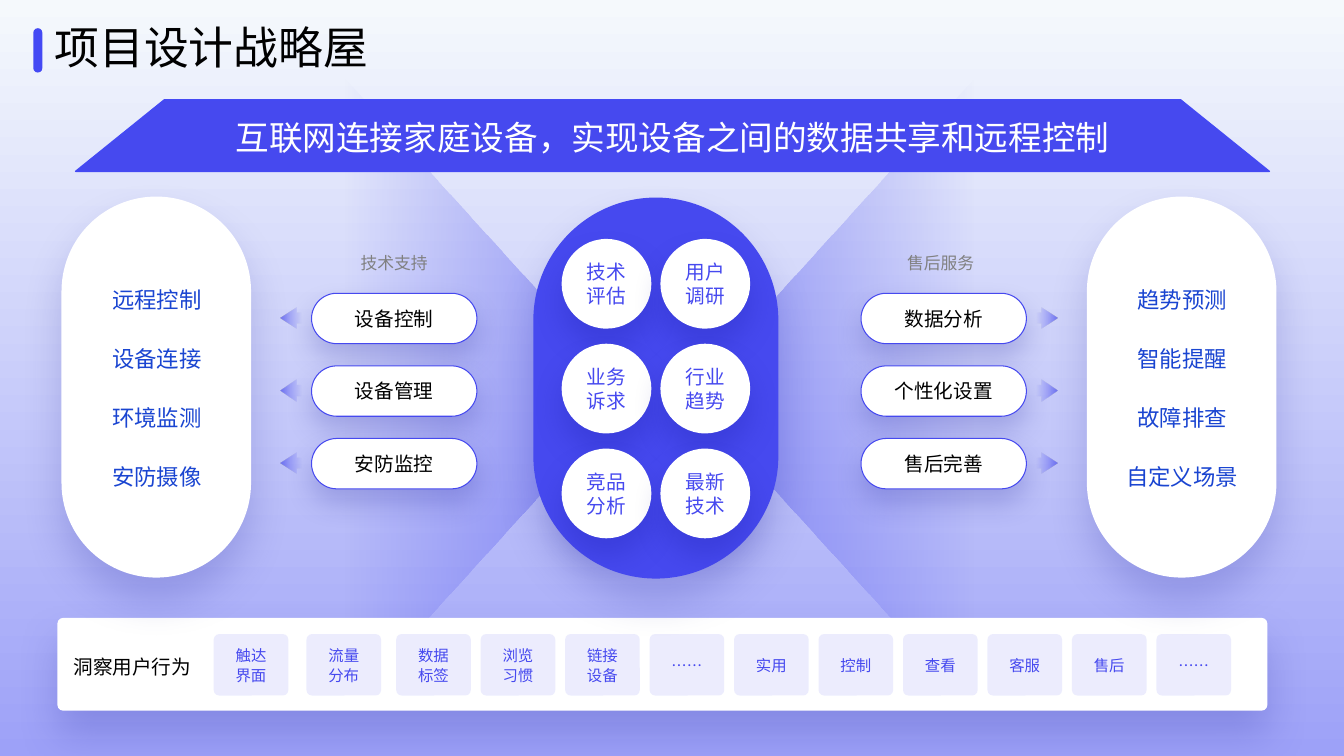
from dataclasses import dataclass
from typing import Optional

import pptx
import pptx.dml.color
import pptx.enum.shapes
import pptx.enum.text
import pptx.oxml
import pptx.oxml.ns
import pptx.shapes.autoshape
import pptx.util
from lxml import etree

Inches = pptx.util.Inches
Pt = pptx.util.Pt
RGBColor = pptx.dml.color.RGBColor
SHAPE = pptx.enum.shapes.MSO_SHAPE
ALIGN = pptx.enum.text.PP_ALIGN
ANCHOR = pptx.enum.text.MSO_ANCHOR
AUTOSIZE = pptx.enum.text.MSO_AUTO_SIZE
qn = pptx.oxml.ns.qn

FONT = "Noto Sans CJK SC"
INDIGO = RGBColor(0x46, 0x49, 0xEF)
ACCENT = RGBColor(0x44, 0x49, 0xF4)
LIST_BLUE = RGBColor(0x1A, 0x45, 0xD1)
LILAC = RGBColor(0xDA, 0xDB, 0xFC)
SHADOW_BLUE = RGBColor(0x0C, 0x0F, 0x8E)
SKY_TOP = RGBColor(0xF5, 0xF9, 0xFC)
SKY_BOTTOM = RGBColor(0x9D, 0xA1, 0xF8)
WHITE = RGBColor(0xFF, 0xFF, 0xFF)
BLACK = RGBColor(0, 0, 0)
GRAY = RGBColor(0x80, 0x80, 0x80)


@dataclass(frozen=True)
class Shadow:
    alpha: int
    blur: float
    distance: float


@dataclass(frozen=True)
class Style:
    shape: SHAPE
    fill: RGBColor
    adjustments: tuple[float, ...] = ()
    alpha: int = 100
    line: Optional[RGBColor] = None
    line_width: float = 0.75
    shadow: Optional[Shadow] = None


@dataclass(frozen=True)
class TextStyle:
    size: float
    color: RGBColor
    align: ALIGN = ALIGN.CENTER
    spacing: float = 1.0
    inset: float = 0.1


@dataclass(frozen=True)
class Wing:
    """One half of the house: outcome list, service pills and arrows."""
    heading: str
    heading_left: float
    pills: tuple[str, ...]
    pill_left: float
    arrow_left: float
    flipped: bool
    outcomes: tuple[str, ...]
    capsule_left: float


@dataclass(frozen=True)
class Beam:
    left: float
    rotation: int


PANEL_SHADOW = Shadow(18, 29, 16)
BAR = Style(SHAPE.ROUNDED_RECTANGLE, WHITE, (0.06,), shadow=PANEL_SHADOW)
CAPSULE = Style(SHAPE.ROUNDED_RECTANGLE, WHITE, (0.5,), shadow=PANEL_SHADOW)
CORE = Style(SHAPE.ROUNDED_RECTANGLE, INDIGO, (0.5,), shadow=PANEL_SHADOW)
CHIP = Style(SHAPE.ROUNDED_RECTANGLE, LILAC, (0.09,), alpha=50)
PILL = Style(SHAPE.ROUNDED_RECTANGLE, WHITE, (0.5,), line=INDIGO, shadow=Shadow(20, 20, 10))
CIRCLE = Style(SHAPE.OVAL, WHITE, shadow=Shadow(20, 22.1, 12.6))
ROOF = Style(SHAPE.TRAPEZOID, INDIGO, (1.24,), line=ACCENT, line_width=1)
MARKER = Style(SHAPE.ROUNDED_RECTANGLE, ACCENT, (0.5,))
BEAM = Style(SHAPE.ISOSCELES_TRIANGLE, INDIGO)
ARROW = Style(SHAPE.RIGHT_ARROW, INDIGO, (0.5, 0.76))

CHIP_TEXT = TextStyle(11, INDIGO, spacing=1.1, inset=0.18)
PILL_TEXT = TextStyle(14, BLACK)
CIRCLE_TEXT = TextStyle(14, INDIGO, inset=0.11)
ROOF_TEXT = TextStyle(24, WHITE)
HEADING_TEXT = TextStyle(12, GRAY)
BAR_TEXT = TextStyle(14, BLACK, ALIGN.LEFT, 1.1)
LIST_TEXT = TextStyle(16, LIST_BLUE, spacing=1.1)
TITLE_TEXT = TextStyle(32, BLACK, ALIGN.LEFT)

BEAMS = (Beam(1.67, 90), Beam(5.09, 270))
WINGS = (
    Wing("技术支持", 3.47, ("设备控制", "设备管理", "安防监控"), 3.09, 2.78, True,
         ("远程控制", "设备连接", "环境监测", "安防摄像"), 0.61),
    Wing("售后服务", 8.89, ("数据分析", "个性化设置", "售后完善"), 8.54, 10.28, False,
         ("趋势预测", "智能提醒", "故障排查", "自定义场景"), 10.78),
)
INSIGHTS = ("技术评估", "用户调研", "业务诉求", "行业趋势", "竞品分析", "最新技术")
BEHAVIORS = ("触达界面", "流量分布", "数据标签", "浏览习惯", "链接设备", "……",
             "实用", "控制", "查看", "客服", "售后", "……")
EVEN_START, EVEN_END = 3.93, 11.47
EVEN_STEP = (EVEN_END - EVEN_START) / (len(BEHAVIORS) - 3)
CHIP_LEFTS = [2.12, 3.04] + [EVEN_START + EVEN_STEP * i for i in range(len(BEHAVIORS) - 2)]


def add_color(parent: etree._Element, color: RGBColor, alpha: int) -> None:
    node = etree.SubElement(parent, qn("a:srgbClr"), val=str(color))
    etree.SubElement(node, qn("a:alpha"), val=str(alpha * 1000))


def paint_gradient(holder: etree._Element, stops: list[tuple[int, RGBColor, int]], angle: int) -> None:
    """Swap the holder's solid fill for stops of (position, colour, alpha)."""
    gradient = etree.Element(qn("a:gradFill"), rotWithShape="1")
    stop_list = etree.SubElement(gradient, qn("a:gsLst"))
    for position, color, alpha in stops:
        add_color(etree.SubElement(stop_list, qn("a:gs"), pos=str(position * 1000)), color, alpha)
    etree.SubElement(gradient, qn("a:lin"), ang=str(angle * 60000), scaled="0")
    holder.replace(holder.find(qn("a:solidFill")), gradient)


def draw(page, style: Style, left: float, top: float, width: float, height: float) -> pptx.shapes.autoshape.Shape:
    box = page.shapes.add_shape(style.shape, Inches(left), Inches(top), Inches(width), Inches(height))
    for index, value in enumerate(style.adjustments):
        box.adjustments[index] = value
    box.fill.solid()
    box.fill.fore_color.rgb = style.fill
    properties = box.element.spPr
    if style.alpha < 100:
        color = properties.find(qn("a:solidFill"))[0]
        etree.SubElement(color, qn("a:alpha"), val=str(style.alpha * 1000))
    if style.line is None:
        box.line.fill.background()
    else:
        box.line.color.rgb = style.line
        box.line.width = Pt(style.line_width)
    box.shadow.inherit = False
    if style.shadow:
        outer = etree.SubElement(
            properties.find(qn("a:effectLst")), qn("a:outerShdw"), blurRad=str(Pt(style.shadow.blur)),
            dist=str(Pt(style.shadow.distance)), dir="5400000", algn="t", rotWithShape="0")
        add_color(outer, SHADOW_BLUE, style.shadow.alpha)
    return box


def write(box, lines: tuple[str, ...], style: TextStyle, anchor: ANCHOR = ANCHOR.MIDDLE,
          wrap: bool = True, gap: float = 0) -> None:
    frame = box.text_frame
    frame.auto_size = AUTOSIZE.NONE
    frame.word_wrap = wrap
    frame.vertical_anchor = anchor
    frame.margin_left = frame.margin_right = Inches(style.inset)
    frame.margin_top = frame.margin_bottom = Inches(0.05)
    for index, line in enumerate(lines):
        para = frame.add_paragraph() if index else frame.paragraphs[0]
        para.alignment = style.align
        para.line_spacing = style.spacing
        para.space_before = Pt(gap if index else 0)
        span = para.add_run()
        span.text = line
        span.font.size = Pt(style.size)
        span.font.name = FONT
        span.font.color.rgb = style.color


def place(page, holder, left: float, top: float, width: float, height: float) -> None:
    """Move a placeholder and bring it to the front."""
    holder.left, holder.top = Inches(left), Inches(top)
    holder.width, holder.height = Inches(width), Inches(height)
    page.shapes.element.append(holder.element)


def label(page, text: str, style: TextStyle, left: float, top: float, width: float, height: float) -> None:
    box = page.shapes.add_textbox(Inches(left), Inches(top), Inches(width), Inches(height))
    write(box, (text,), style, ANCHOR.TOP)


def draw_wing(page, wing: Wing, holder) -> None:
    label(page, wing.heading, HEADING_TEXT, wing.heading_left, 2.46, 0.88, 0.3)
    for row, name in enumerate(wing.pills):
        top = 2.91 + 0.72 * row
        write(draw(page, PILL, wing.pill_left, top, 1.64, 0.5), (name,), PILL_TEXT)
        arrow = draw(page, ARROW, wing.arrow_left, top + 0.14, 0.21, 0.21)
        paint_gradient(arrow.element.spPr, [(0, INDIGO, 0), (50, INDIGO, 30), (100, INDIGO, 70)], 0)
        if wing.flipped:
            arrow.element.spPr.find(qn("a:xfrm")).set("flipH", "1")
    draw(page, CAPSULE, wing.capsule_left, 1.95, 1.88, 3.78)
    place(page, holder, wing.capsule_left - 0.06, 2.76, 2.01, 2.16)
    write(holder, wing.outcomes, LIST_TEXT, ANCHOR.TOP, gap=21)
    for properties in holder.element.iter(qn("a:pPr")):
        properties.set("marL", "0")
        properties.set("indent", "0")
        etree.SubElement(properties, qn("a:buNone"))


def main() -> None:
    deck = pptx.Presentation()
    deck.slide_width, deck.slide_height = Inches(13.33), Inches(7.5)
    page = deck.slides.add_slide(deck.slide_layouts[3])
    title, *list_holders = page.placeholders
    page.background.fill.solid()
    page.background.fill.fore_color.rgb = SKY_TOP
    paint_gradient(next(page.element.iter(qn("p:bgPr"))), [(0, SKY_TOP, 100), (100, SKY_BOTTOM, 28)], 90)

    for beam in BEAMS:
        triangle = draw(page, BEAM, beam.left, 2.47, 6.32, 2.87)
        triangle.rotation = beam.rotation
        paint_gradient(triangle.element.spPr, [(0, INDIGO, 0), (100, INDIGO, 50)], 270)
    draw(page, BAR, 0.57, 6.13, 12, 0.92)
    label(page, "洞察用户行为", BAR_TEXT, 0.63, 6.42, 1.46, 0.33)
    for left, behavior in zip(CHIP_LEFTS, BEHAVIORS):
        write(draw(page, CHIP, left, 6.29, 0.74, 0.61), (behavior,), CHIP_TEXT)
    for wing, holder in zip(WINGS, list_holders):
        draw_wing(page, wing, holder)

    draw(page, MARKER, 0.33, 0.28, 0.09, 0.44)
    place(page, title, 0.44, 0.15, 3.34, 0.64)
    write(title, ("项目设计战略屋",), TITLE_TEXT, ANCHOR.TOP, wrap=False)
    roof = draw(page, ROOF, 0.75, 0.99, 11.84, 0.71)
    write(roof, ("互联网连接家庭设备，实现设备之间的数据共享和远程控制",), ROOF_TEXT)
    draw(page, CORE, 5.29, 1.96, 2.43, 3.78)
    for index, insight in enumerate(INSIGHTS):
        row, column = divmod(index, 2)
        circle = draw(page, CIRCLE, 5.57 + 0.98 * column, 2.37 + 1.04 * row, 0.89, 0.89)
        write(circle, (insight,), CIRCLE_TEXT)

    for latin in list(page.element.iter(qn("a:latin"))):
        latin.addnext(etree.Element(qn("a:ea"), typeface=FONT))
    deck.save("out.pptx")


if __name__ == "__main__":
    main()
